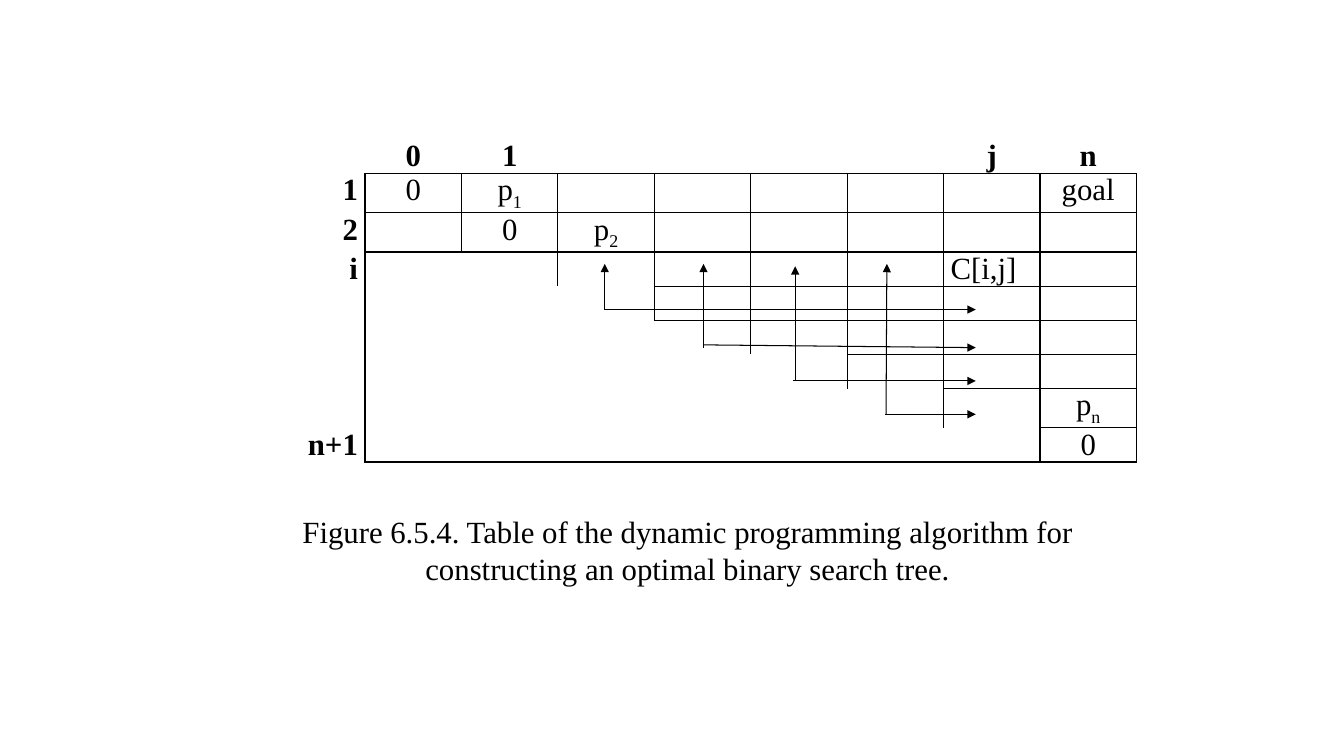
from dataclasses import dataclass

from lxml import etree
from pptx import Presentation
from pptx import util as u
from pptx.dml.color import RGBColor
from pptx.enum import shapes, text
from pptx.oxml import ns


@dataclass(frozen=True)
class Theme:
    ink: str = "000000"
    paper: str = "FFFFFF"
    font: str = "Times New Roman"
    size: float = 22
    border: float = 1
    arrow: float = 0.75


theme = Theme()
LEFT, CENTER, RIGHT = text.PP_ALIGN.LEFT, text.PP_ALIGN.CENTER, text.PP_ALIGN.RIGHT


def write(tf, content, sub="", bold=False, align=CENTER):
    """Fill the first paragraph with content and an optional subscript."""
    p = tf.paragraphs[0]
    p.alignment = align
    for part in filter(None, (content, sub)):
        r = p.add_run()
        r.text = part
        r.font.name, r.font.size, r.font.bold = theme.font, u.Pt(theme.size), bold
        r.font.color.rgb = RGBColor.from_string(theme.ink)
    if sub:
        r._r.get_or_add_rPr().set("baseline", "-25000")


def set_borders(cell, *sides):
    """Draw or clear the left, right, top and bottom edges, in that order."""
    tcPr = cell._tc.get_or_add_tcPr()
    for k, (tag, drawn) in enumerate(zip(("a:lnL", "a:lnR", "a:lnT", "a:lnB"), sides)):
        ln = etree.Element(ns.qn(tag), w=str(u.Pt(theme.border)))
        fill = etree.SubElement(ln, ns.qn("a:solidFill" if drawn else "a:noFill"))
        if drawn:
            etree.SubElement(fill, ns.qn("a:srgbClr"), val=theme.ink)
        tcPr.insert(k, ln)


prs = Presentation()
prs.slide_width, prs.slide_height = u.Cm(33.87), u.Cm(19.05)
s = prs.slides.add_slide(prs.slide_layouts[6])

# Table: row 0 and column 0 hold the indices
N = 9
LABEL_W, COL_W = 2.8, 2.43
ROW_H, SUBSCRIPT_ROW_H = 0.86, 0.99
heights = [SUBSCRIPT_ROW_H if row in (1, 2, 7) else ROW_H for row in range(N)]
sp = s.shapes.add_table(N, N, u.Cm(6.4), u.Cm(3.51),
                        u.Cm(LABEL_W + 8 * COL_W), u.Cm(sum(heights)))
tbl = sp.table
tbl.first_row = tbl.horz_banding = False
for i in range(N):
    tbl.rows[i].height = u.Cm(heights[i])
    tbl.columns[i].width = u.Cm(COL_W if i else LABEL_W)

# Blank areas below the diagonal: first cell -> last cell
merges = {(3, 1): (3, 2), (4, 1): (8, 3), (6, 4): (6, 5), (7, 4): (7, 6), (8, 4): (8, 7)}
for first, last in merges.items():
    tbl.cell(*first).merge(tbl.cell(*last))

# First column with a line under each row; the steps follow the diagonal
line_from = [1, 1, 1, 4, 4, 6, 7, 8, 1]
for row in range(N):
    for col in range(N):
        cell = tbl.cell(row, col)
        cell.fill.solid()
        cell.fill.fore_color.rgb = RGBColor.from_string(theme.paper)
        cell.margin_left = cell.margin_right = u.Cm(0.18)
        cell.margin_top = cell.margin_bottom = 0
        end_row, end_col = merges.get((row, col), (row, col))
        left, right = (row > 0 and edge > 0 and (edge in (1, N) or row < 3 or edge >= row)
                       for edge in (col, end_col + 1))
        top = row > 0 and col >= line_from[row - 1]
        set_borders(cell, left, right, top, col >= line_from[end_row])

for col, label in {1: "0", 2: "1", 7: "j", 8: "n"}.items():
    write(tbl.cell(0, col).text_frame, label, bold=True)
for row, label in {1: "1", 2: "2", 3: "i", 8: "n+1"}.items():
    write(tbl.cell(row, 0).text_frame, label, bold=True, align=RIGHT)
for row, col, value, sub in ((1, 1, "0", ""), (1, 2, "p", "1"), (1, 8, "goal", ""),
                             (2, 2, "0", ""), (2, 3, "p", "2"),
                             (7, 8, "p", "n"), (8, 8, "0", "")):
    write(tbl.cell(row, col).text_frame, value, sub)
write(tbl.cell(3, 7).text_frame, "C[i,j]", align=LEFT)

# Arrow pairs: each row i entry goes with one entry of column j
ARROW_END = 24.59
upward = ((15.24, 7.8, 15.24, 6.65), (17.73, 8.76, 17.73, 6.65),
          (20.04, 9.6, 20.04, 6.71), (22.33, 10.44, 22.35, 6.65))
rightward = ((15.24, 7.8, 7.8), (17.73, 8.69, 8.76), (19.99, 9.6, 9.6), (22.3, 10.44, 10.44))
for ends in upward + tuple((x, y1, ARROW_END, y2) for x, y1, y2 in rightward):
    arrow = s.shapes.add_connector(shapes.MSO_CONNECTOR.STRAIGHT, *map(u.Cm, ends))
    arrow.line.width = u.Pt(theme.arrow)
    arrow.line.color.rgb = RGBColor.from_string(theme.ink)
    etree.SubElement(arrow.line._get_or_add_ln(), ns.qn("a:tailEnd"), type="triangle")
    etree.SubElement(arrow._element.spPr, ns.qn("a:effectLst"))

caption = s.shapes.add_textbox(u.Cm(6), u.Cm(12.8), u.Cm(22.65), u.Cm(2.13))
caption.text_frame.word_wrap = True
write(caption.text_frame, "Figure 6.5.4. Table of the dynamic programming algorithm for "
                          "constructing an optimal binary search tree.")

prs.save("out.pptx")
